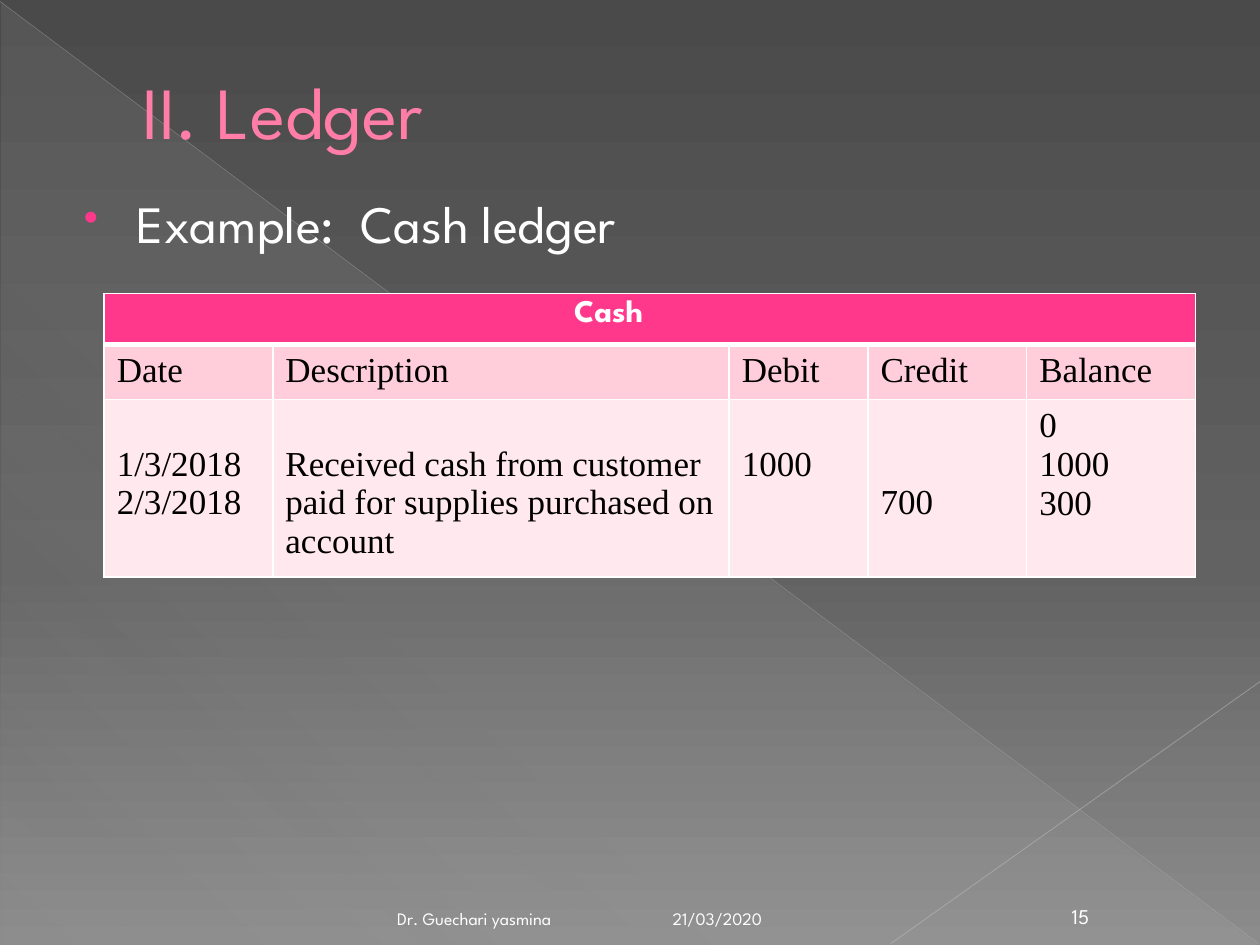
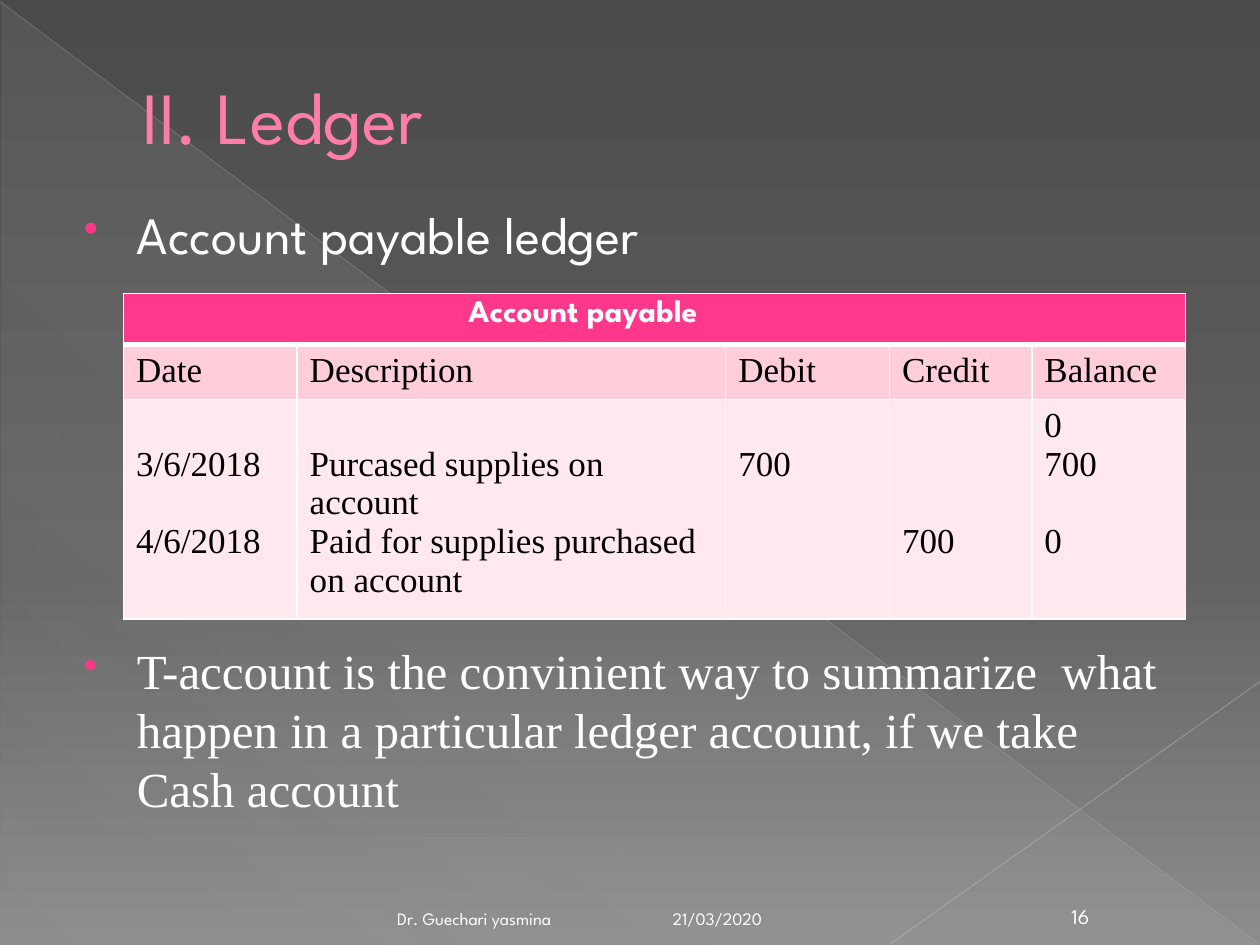
"""Build two ledger slides with tables on a shared dark background."""
from pptx import Presentation
from pptx.dml.color import RGBColor
from pptx.enum.shapes import MSO_CONNECTOR, MSO_SHAPE
from pptx.enum.text import MSO_ANCHOR, PP_ALIGN
from pptx.oxml import parse_xml
from pptx.oxml.ns import nsdecls, qn
from pptx.util import Cm, Pt

STRAIGHT = MSO_CONNECTOR.STRAIGHT
TRIANGLE = MSO_SHAPE.RIGHT_TRIANGLE
TOP, MIDDLE, BOTTOM = MSO_ANCHOR.TOP, MSO_ANCHOR.MIDDLE, MSO_ANCHOR.BOTTOM
LEFT, CENTER, RIGHT = PP_ALIGN.LEFT, PP_ALIGN.CENTER, PP_ALIGN.RIGHT

DISPLAY, SERIF = "League Spartan", "Times New Roman"
WHITE, BLACK, PINK = "FFFFFF", "000000", "FF388C"
TITLE_PINK, TITLE_EDGE = "FF7DA7", "B12761"
HEADING_FILL, ENTRY_FILL = "FFCEDA", "FFE8EE"

BACKGROUND_STOPS = [(0, "4A4A4A", 100), (60, "626262", 100), (100, "8C8C8C", 100)]
TRIANGLE_STOPS = [(0, "D2D2D2", 10), (70, "D2D2D2", 8), (100, "D2D2D2", 1)]

TITLE_FORMAT = {"name": DISPLAY, "size": Pt(42), "color": TITLE_PINK}
LEAD_FORMAT = {"name": DISPLAY, "size": Pt(30), "color": WHITE}
NOTE_FORMAT = {"name": SERIF, "size": Pt(28), "color": WHITE}
FOOTER_FORMAT = {"name": DISPLAY, "size": Pt(10), "color": WHITE}
NUMBER_FORMAT = {"name": DISPLAY, "size": Pt(12), "color": WHITE}
ACCOUNT_FORMAT = {"name": DISPLAY, "size": Pt(18), "color": WHITE, "bold": True}
ENTRY_FORMAT = {"name": SERIF, "size": Pt(20), "color": BLACK, "bold": False}

HEADINGS = ["Date", "Description", "Debit", "Credit", "Balance"]
ROW_HEIGHT = 1.03
ENTRY_LINE = 0.78
CELL_MARGIN = 0.13

LEDGERS = [
    {
        "number": "15",
        "title_height": 2.97,
        "body_top": 3.73,
        "bullets": [("Example:  Cash ledger", LEAD_FORMAT, 6)],
        "account": "Cash",
        "account_indent": 9.22,
        "table_left": 2.1,
        "columns": [3.4, 9.2, 2.8, 3.2, 3.4],
        "entry_height": 3.2,
        "entries": [
            "\n1/3/2018\n2/3/2018",
            "\nReceived cash from customer\npaid for supplies purchased on account",
            "\n1000",
            "\n\n700",
            "0\n1000\n300",
        ],
    },
    {
        "number": "16",
        "title_height": 3.18,
        "body_top": 3.94,
        "bullets": [
            ("Account payable ledger", LEAD_FORMAT, 6),
            ("T-account is the convinient way to summarize  what happen in a "
             "particular ledger account, if we take Cash account", NOTE_FORMAT, 215),
        ],
        "account": "Account payable",
        "account_indent": 6.7,
        "table_left": 2.49,
        "columns": [3.5, 8.64, 3.3, 2.87, 3.1],
        "entry_height": 3.95,
        "entries": [
            "\n3/6/2018\n\n4/6/2018",
            "\nPurcased supplies on account\nPaid for supplies purchased on account",
            "\n700",
            "\n\n\n700",
            "0\n700\n\n0",
        ],
    },
]


def color(hex_value):
    """Turn a hex string into a colour."""
    return RGBColor.from_string(hex_value)


def set_gradient(properties, fill_tag, stops, angle):
    """Replace a plain fill by a linear gradient of (position, colour, opacity)."""
    stop_list = "".join(
        f'<a:gs pos="{position * 1000}"><a:srgbClr val="{hex_value}">'
        f'<a:alpha val="{opacity * 1000}"/></a:srgbClr></a:gs>'
        for position, hex_value, opacity in stops)
    gradient = parse_xml(
        f'<a:gradFill {nsdecls("a")} rotWithShape="1"><a:gsLst>{stop_list}</a:gsLst>'
        f'<a:lin ang="{angle * 60000}" scaled="0"/></a:gradFill>')
    properties.replace(properties.find(qn(fill_tag)), gradient)


def add_line(slide, ends, hex_value, width, opacity):
    """Draw a thin translucent line."""
    line = slide.shapes.add_connector(STRAIGHT, *[Cm(value) for value in ends])
    line.line.width = Pt(width)
    line.line.color.rgb = color(hex_value)
    shade = line.line._ln.find(".//" + qn("a:srgbClr"))
    shade.append(parse_xml(f'<a:alpha {nsdecls("a")} val="{opacity * 1000}"/>'))
    line._element.spPr.append(parse_xml(f'<a:effectLst {nsdecls("a")}/>'))


def add_backdrop(slide):
    """Draw the gradient background with its triangle and lines."""
    slide.background.fill.solid()
    set_gradient(slide.element.find(".//" + qn("p:bgPr")), "a:solidFill",
                 BACKGROUND_STOPS, 90)
    triangle = slide.shapes.add_shape(TRIANGLE, Cm(0.03), Cm(0.05), Cm(25.35), Cm(19))
    triangle.shadow.inherit = False
    triangle.line.fill.background()
    triangle.fill.background()
    set_gradient(triangle._element.spPr, "a:noFill", TRIANGLE_STOPS, 133)
    add_line(slide, (0, 0.03, 25.37, 19.02), "BFBFBF", 0.39, 35)
    add_line(slide, (25.4, 13.74, 17.96, 19.02), "C6C6C6", 0.47, 45)


def add_run(paragraph, text, format_values):
    """Add a run whose font follows a dict of format values."""
    run = paragraph.add_run()
    run.text = text
    for name, value in format_values.items():
        if name == "color":
            run.font.color.rgb = color(value)
        else:
            setattr(run.font, name, value)
    return run


def set_indent(paragraph, left, first_line=0):
    """Indent a paragraph and return its properties."""
    properties = paragraph._p.get_or_add_pPr()
    properties.set("marL", str(Cm(left)))
    properties.set("indent", str(Cm(first_line)))
    return properties


def add_text_frame(slide, box, anchor):
    """Add a wrapping text box and return its frame."""
    frame = slide.shapes.add_textbox(*[Cm(value) for value in box]).text_frame
    frame.word_wrap = True
    frame.vertical_anchor = anchor
    return frame


def add_title(slide, text, height):
    """Add the pink outlined title."""
    paragraph = add_text_frame(slide, (1.27, 0.74, 22.86, height), MIDDLE).paragraphs[0]
    set_indent(paragraph, 1.35)
    run = add_run(paragraph, text, TITLE_FORMAT)
    run.font._element.insert(0, parse_xml(
        f'<a:ln {nsdecls("a")} w="{Pt(0.5)}"><a:solidFill>'
        f'<a:srgbClr val="{TITLE_EDGE}"/></a:solidFill></a:ln>'))


def add_bullets(slide, top, bullets):
    """Add the body text as bulleted paragraphs."""
    frame = add_text_frame(slide, (1.27, top, 22.86, 17.93 - top), TOP)
    for index, (text, format_values, gap) in enumerate(bullets):
        paragraph = frame.add_paragraph() if index else frame.paragraphs[0]
        paragraph.space_before = Pt(gap)
        properties = set_indent(paragraph, 1.24, -1.07)
        for tag in (f'buClr {nsdecls("a")}><a:srgbClr val="{PINK}"/></a:buClr',
                    f'buSzPct {nsdecls("a")} val="80000"/',
                    f'buChar {nsdecls("a")} char="•"/'):
            properties.append(parse_xml(f"<a:{tag}>"))
        add_run(paragraph, text, format_values)


def add_footer(slide, left, width, text, format_values, alignment, right_margin=0.25):
    """Add one footer entry at the bottom of the slide."""
    frame = add_text_frame(slide, (left, 18.01, width, 0.84), BOTTOM)
    frame.margin_right = Cm(right_margin)
    frame.paragraphs[0].alignment = alignment
    add_run(frame.paragraphs[0], text, format_values)


def style_cell(cell, fill, bottom_width=1):
    """Give a cell white borders and a solid fill."""
    properties = cell._tc.get_or_add_tcPr()
    for side, width in zip("LRTB", (1, 1, 1, bottom_width)):
        properties.append(parse_xml(
            f'<a:ln{side} {nsdecls("a")} w="{Pt(width)}"><a:solidFill>'
            f'<a:srgbClr val="{WHITE}"/></a:solidFill></a:ln{side}>'))
    cell.fill.solid()
    cell.fill.fore_color.rgb = color(fill)


def write_entry(cell, text):
    """Write a cell's lines, turning skipped lines into spacing."""
    skipped, started = 0, False
    for line in text.split("\n"):
        if not line:
            skipped += 1
            continue
        if started:
            paragraph = cell.text_frame.add_paragraph()
            paragraph.space_before = Cm(skipped * ENTRY_LINE)
        else:
            paragraph = cell.text_frame.paragraphs[0]
            cell.margin_top = Cm(CELL_MARGIN + skipped * ENTRY_LINE)
        add_run(paragraph, line, ENTRY_FORMAT)
        skipped, started = 0, True


def add_ledger_table(slide, ledger):
    """Add the account table: name, headings and entries."""
    heights = [ROW_HEIGHT, ROW_HEIGHT, ledger["entry_height"]]
    columns = ledger["columns"]
    table = slide.shapes.add_table(
        len(heights), len(columns), Cm(ledger["table_left"]), Cm(5.92),
        Cm(sum(columns)), Cm(sum(heights))).table
    for column, width in zip(table.columns, columns):
        column.width = Cm(width)
    for row, height in zip(table.rows, heights):
        row.height = Cm(height)
    for index, (heading, entry) in enumerate(zip(HEADINGS, ledger["entries"])):
        style_cell(table.cell(0, index), PINK, 3)
        style_cell(table.cell(1, index), HEADING_FILL)
        style_cell(table.cell(2, index), ENTRY_FILL)
        write_entry(table.cell(1, index), heading)
        write_entry(table.cell(2, index), entry)
    account = table.cell(0, 0)
    account.merge(table.cell(0, len(columns) - 1))
    paragraph = account.text_frame.paragraphs[0]
    set_indent(paragraph, ledger["account_indent"])
    add_run(paragraph, ledger["account"], ACCOUNT_FORMAT)


def add_ledger_slide(presentation, ledger):
    """Add one complete ledger slide."""
    slide = presentation.slides.add_slide(presentation.slide_layouts[6])
    add_backdrop(slide)
    add_title(slide, "II. Ledger", ledger["title_height"])
    add_bullets(slide, ledger["body_top"], ledger["bullets"])
    add_ledger_table(slide, ledger)
    add_footer(slide, 13.31, 5.92, "21/03/2020", FOOTER_FORMAT, LEFT)
    add_footer(slide, 21.08, 1.4, ledger["number"], NUMBER_FORMAT, CENTER)
    add_footer(slide, 1.27, 11.84, "Dr. Guechari yasmina", FOOTER_FORMAT, RIGHT, 2)


def main():
    """Build and save the presentation."""
    presentation = Presentation()
    presentation.slide_width, presentation.slide_height = Cm(25.4), Cm(19.05)
    for ledger in LEDGERS:
        add_ledger_slide(presentation, ledger)
    presentation.save("out.pptx")


if __name__ == "__main__":
    main()
